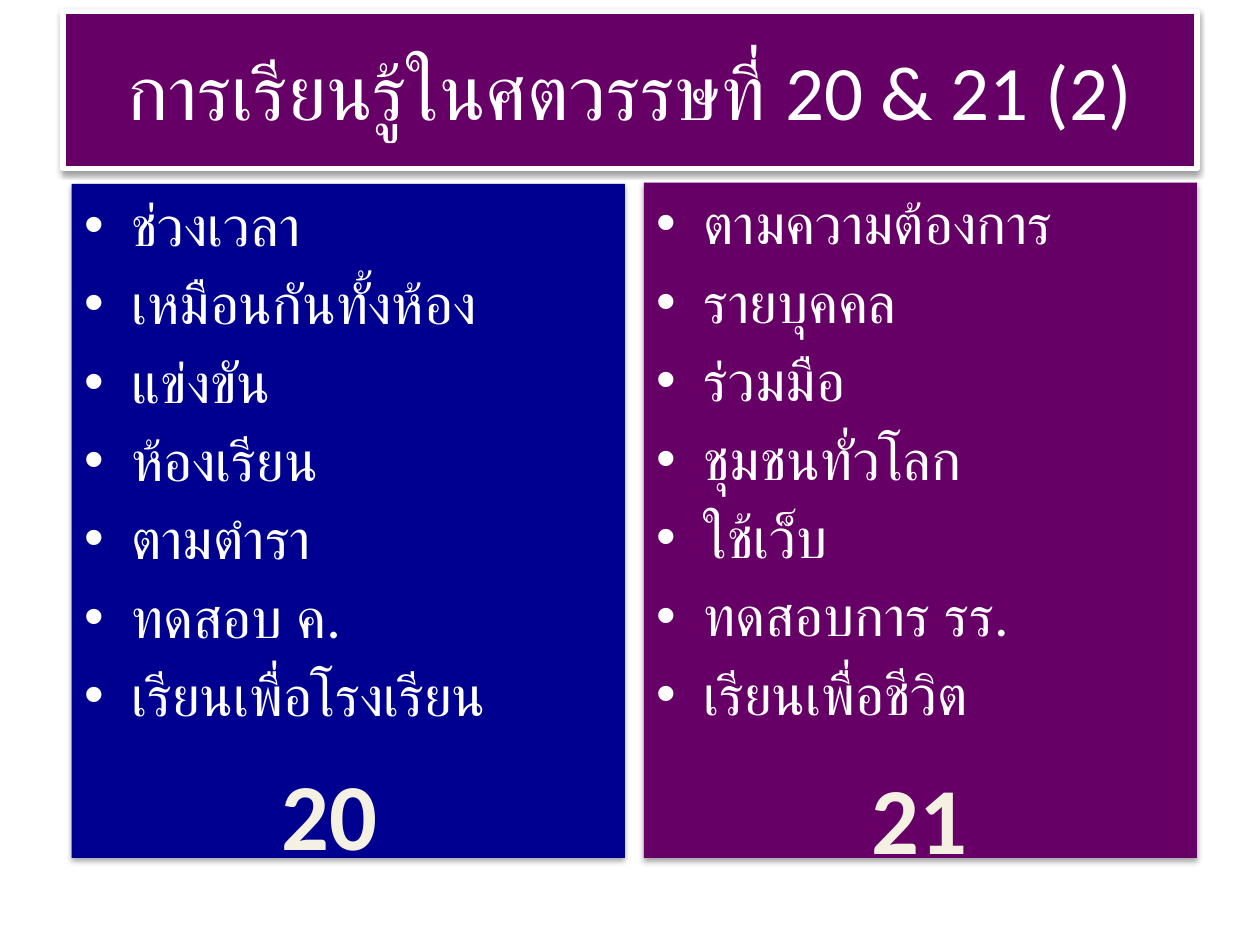
from lxml.etree import SubElement as add_element
from pptx import Presentation
from pptx.dml.color import RGBColor as Color
from pptx.enum.shapes import MSO_SHAPE as Shape
from pptx.enum.text import MSO_ANCHOR as Anchor, MSO_AUTO_SIZE as AutoSize, PP_ALIGN as Align
from pptx.oxml.ns import qn
from pptx.util import Pt

THEME = {
    "font": "Calibri",
    "white": "FFFFFF", "purple": "660066", "blue": "000090",
    "cream": "F4F1E3", "outline": "054697", "shadow": "000000",
    "title": 44, "body": 32, "century": 54,
}

TITLE = "การเรียนรู้ในศตวรรษที่ 20 & 21 (2)"
TITLE_BOX = (36, 6.5, 648, 90)
COLUMNS = [
    {"fill": "purple", "box": (367.9, 104.4, 316.1, 385.9),
     "century": "21", "century_at": (490.3, 430.6),
     "items": ["ตามความต้องการ", "รายบุคคล", "ร่วมมือ", "ชุมชนทั่วโลก",
               "ใช้เว็บ", "ทดสอบการ รร.", "เรียนเพื่อชีวิต"]},
    {"fill": "blue", "box": (41, 105.1, 316.1, 385.2),
     "century": "20", "century_at": (153.4, 428.4),
     "items": ["ช่วงเวลา", "เหมือนกันทั้งห้อง", "แข่งขัน", "ห้องเรียน",
               "ตามตำรา", "ทดสอบ ค.", "เรียนเพื่อโรงเรียน"]},
]
CENTURY_SIZE = (69.8, 72.7)
INDENT = 27


def color(name):
    return Color.from_string(THEME[name])


def set_format(target, values):
    for name, value in values.items():
        setattr(target, name, value)


def add_text(paragraph, text, size, tint, bold=False):
    run = paragraph.add_run()
    run.text = text
    set_format(run.font, {"name": THEME["font"], "size": Pt(THEME[size]), "bold": bold})
    run.font.color.rgb = color(tint)
    return run


def add_shadow(shape, distance, opacity):
    shape.shadow.inherit = False
    effects = shape._element.spPr.find(qn("a:effectLst"))
    shadow = add_element(effects, qn("a:outerShdw"), blurRad=str(Pt(3.1)),
                         dist=str(Pt(distance)), dir="5400000", rotWithShape="0")
    tint = add_element(shadow, qn("a:srgbClr"), val=THEME["shadow"])
    add_element(tint, qn("a:alpha"), val=str(opacity * 1000))


def add_panel(slide, box, fill, anchor, distance, opacity):
    shape = slide.shapes.add_shape(Shape.RECTANGLE, *map(Pt, box))
    shape.fill.solid()
    shape.fill.fore_color.rgb = color(fill)
    shape.line.fill.background()
    add_shadow(shape, distance, opacity)
    set_format(shape.text_frame, {"word_wrap": True, "vertical_anchor": anchor})
    return shape


def add_title(slide):
    shape = add_panel(slide, TITLE_BOX, "purple", Anchor.MIDDLE, 1.6, 38)
    shape.line.color.rgb = color("white")
    shape.line.width = Pt(3)
    paragraph = shape.text_frame.paragraphs[0]
    paragraph.alignment = Align.CENTER
    add_text(paragraph, TITLE, "title", "white")


def add_column(slide, column):
    frame = add_panel(slide, column["box"], column["fill"], Anchor.TOP, 1.8, 35).text_frame
    for index, item in enumerate(column["items"]):
        paragraph = frame.add_paragraph() if index else frame.paragraphs[0]
        paragraph.alignment = Align.LEFT
        properties = paragraph._p.get_or_add_pPr()
        properties.set("marL", str(Pt(INDENT)))
        properties.set("indent", str(Pt(-INDENT)))
        spacing = add_element(properties, qn("a:spcBef"))
        add_element(spacing, qn("a:spcPct"), val="20000")
        add_element(properties, qn("a:buFont"), typeface="Arial")
        add_element(properties, qn("a:buChar"), char="•")
        add_text(paragraph, item, "body", "white")


def add_century(slide, column):
    shape = slide.shapes.add_textbox(*map(Pt, column["century_at"] + CENTURY_SIZE))
    set_format(shape.text_frame, {"word_wrap": False, "auto_size": AutoSize.SHAPE_TO_FIT_TEXT})
    paragraph = shape.text_frame.paragraphs[0]
    paragraph.alignment = Align.CENTER
    run = add_text(paragraph, column["century"], "century", "cream", bold=True)
    properties = run._r.get_or_add_rPr()
    outline = add_element(properties, qn("a:ln"), w=str(Pt(1)))
    properties.insert(0, outline)
    fill = add_element(outline, qn("a:solidFill"))
    add_element(fill, qn("a:srgbClr"), val=THEME["outline"])


def main():
    presentation = Presentation()
    set_format(presentation, {"slide_width": Pt(720), "slide_height": Pt(540)})
    slide = presentation.slides.add_slide(presentation.slide_layouts[6])
    add_title(slide)
    for column in COLUMNS:
        add_column(slide, column)
    for column in reversed(COLUMNS):
        add_century(slide, column)
    presentation.save("out.pptx")


if __name__ == "__main__":
    main()
